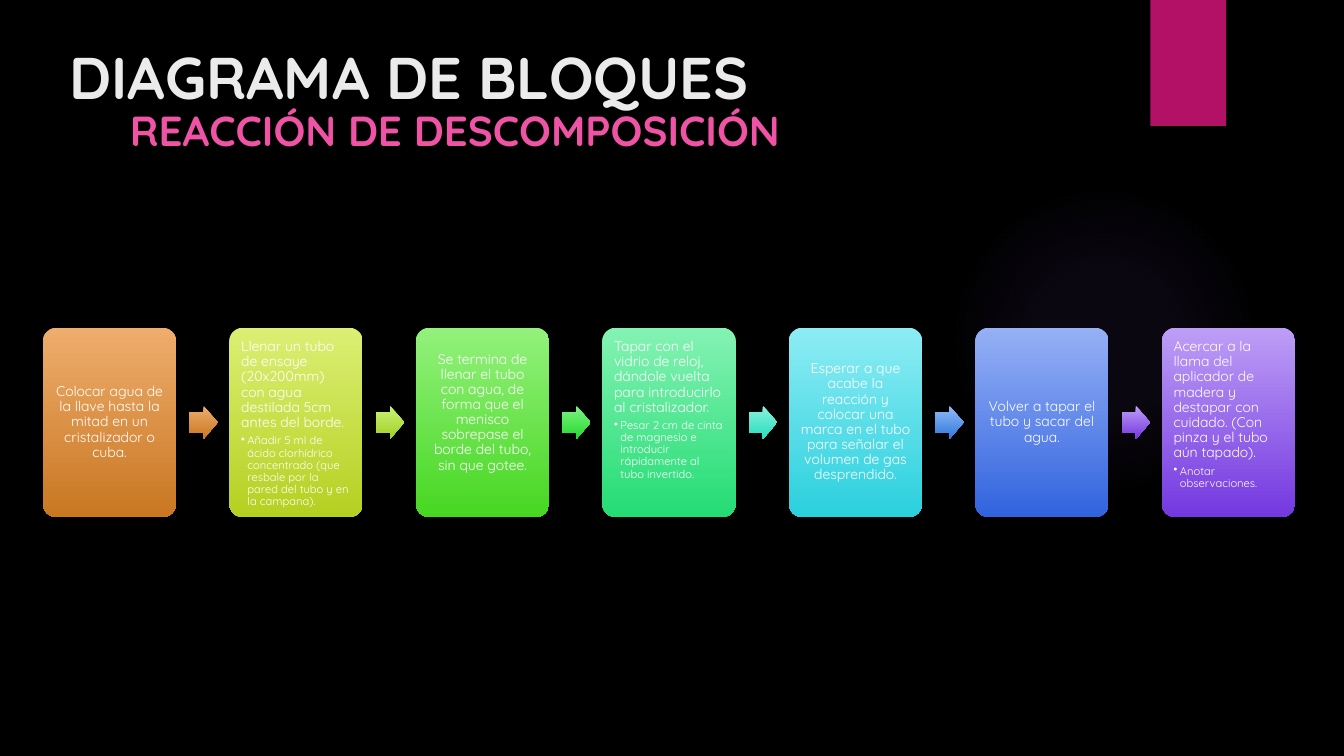
from lxml import etree
from pptx import Presentation
from pptx.dml.color import RGBColor
from pptx.enum.shapes import MSO_SHAPE
from pptx.enum.text import MSO_ANCHOR, MSO_AUTO_SIZE, PP_ALIGN
from pptx.oxml import parse_xml
from pptx.oxml.ns import qn
from pptx.util import Pt

ROUNDED, ARROW = MSO_SHAPE.ROUNDED_RECTANGLE, MSO_SHAPE.RIGHT_ARROW
ELLIPSE, RECTANGLE = MSO_SHAPE.OVAL, MSO_SHAPE.RECTANGLE
TOP, MIDDLE, BOTTOM = MSO_ANCHOR.TOP, MSO_ANCHOR.MIDDLE, MSO_ANCHOR.BOTTOM
LEFT, CENTER = PP_ALIGN.LEFT, PP_ALIGN.CENTER
NO_AUTOFIT = MSO_AUTO_SIZE.NONE

FONT = "Quicksand"
FIRST_LEFT, STEP_TOP, PITCH = 30.7, 234.1, 133.2
STEP_WIDTH, STEP_HEIGHT = 95.2, 135.2
ARROW_OFFSET, ARROW_WIDTH, ARROW_HEIGHT = 104.6, 20.2, 23.6
INSET = 5.6
BULLET_INDENT = Pt(4.5)

STEPS = [
    ("Colocar agua de la llave hasta la mitad en un cristalizador o cuba.",
     "", "EEAD6D", "C97721"),
    ("Llenar un tubo de ensaye (20x200mm) con agua destilada 5cm antes del borde.",
     "Añadir 5 ml de ácido clorhídrico concentrado (que resbale por la pared "
     "del tubo y en la campana).", "DCEF74", "B5D021"),
    ("Se termina de llenar el tubo con agua, de forma que el menisco sobrepase "
     "el borde del tubo, sin que gotee.", "", "93F17C", "47D722"),
    ("Tapar con el vidrio de reloj, dándole vuelta para introducirlo al cristalizador.",
     "Pesar 2 cm de cinta de magnesio e introducir rápidamente al tubo invertido.",
     "84F2B3", "24DC74"),
    ("Esperar a que acabe la reacción y colocar una marca en el tubo para señalar "
     "el volumen de gas desprendido.", "", "8DECF4", "2BD0DE"),
    ("Volver a tapar el tubo y sacar del agua.", "", "95B0F5", "3163DF"),
    ("Acercar a la llama del aplicador de madera y destapar con cuidado. "
     "(Con pinza y el tubo aún tapado).", "Anotar observaciones.", "BD9EF6", "7438E0"),
]
ARROW_COLOURS = [
    ("EEAD6D", "C97721"), ("CCF076", "A0D122"), ("7FF285", "23DA2C"),
    ("89F3E0", "28DDBC"), ("94BBF5", "3078DF"), ("BD9EF6", "7438E0"),
]
EXTRA_BOTTOM = {2: 14}

GLOW_FILL = (
    '<a:gradFill xmlns:a="http://schemas.openxmlformats.org/drawingml/2006/main"><a:gsLst>'
    + "".join(
        f'<a:gs pos="{position}000"><a:srgbClr val="9B6BF2">'
        f'<a:alpha val="{alpha}000"/></a:srgbClr></a:gs>'
        for position, alpha in ((0, 7), (36, 6), (69, 0))
    )
    + '</a:gsLst><a:path path="circle">'
    '<a:fillToRect l="50000" t="50000" r="50000" b="50000"/></a:path></a:gradFill>'
)


def colour(value):
    return RGBColor.from_string(value)


def add_plain_shape(page, kind, left, top, width, height):
    shape = page.shapes.add_shape(kind, Pt(left), Pt(top), Pt(width), Pt(height))
    shape.shadow.inherit = False
    shape.line.fill.background()
    return shape


def fill_solid(shape, value):
    shape.fill.solid()
    shape.fill.fore_color.rgb = colour(value)


def fill_gradient(shape, start, end):
    shape.fill.gradient()
    shape.fill.gradient_angle = 270
    for stop, value in zip(shape.fill.gradient_stops, (start, end)):
        stop.color.rgb = colour(value)


def set_font(para, size, value, bold=False):
    para.font.name = FONT
    para.font.size = Pt(size)
    para.font.bold = bold
    para.font.color.rgb = colour(value)


def set_heading(box, text, size, value, anchor):
    frame = box.text_frame
    frame.word_wrap = True
    frame.auto_size = NO_AUTOFIT
    frame.vertical_anchor = anchor
    para = frame.paragraphs[0]
    para.text = text
    para.alignment = LEFT
    set_font(para, size, value, bold=True)


def add_bullet(para):
    properties = para._p.get_or_add_pPr()
    properties.set("marL", str(BULLET_INDENT))
    properties.set("indent", str(-BULLET_INDENT))
    etree.SubElement(properties, qn("a:buChar")).set("char", "•")


def write_step_para(para, text, size, alignment, space_after):
    para.text = text
    para.alignment = alignment
    para.line_spacing = 0.9
    para.space_after = Pt(space_after)
    set_font(para, size, "FFFFFF")


def add_step(page, left, text, detail, start, end, extra_bottom):
    box = add_plain_shape(page, ROUNDED, left, STEP_TOP, STEP_WIDTH, STEP_HEIGHT)
    box.adjustments[0] = 0.1
    fill_gradient(box, start, end)
    frame = box.text_frame
    frame.word_wrap = True
    frame.margin_left = frame.margin_right = frame.margin_top = Pt(INSET)
    frame.margin_bottom = Pt(INSET + extra_bottom)
    frame.vertical_anchor = TOP if detail else MIDDLE
    write_step_para(frame.paragraphs[0], text, 10, LEFT if detail else CENTER, 3.5)
    if detail:
        para = frame.add_paragraph()
        add_bullet(para)
        write_step_para(para, detail, 8, LEFT, 1.2)


def add_step_arrow(page, left, start, end):
    top = STEP_TOP + (STEP_HEIGHT - ARROW_HEIGHT) / 2
    arrow = add_plain_shape(page, ARROW, left, top, ARROW_WIDTH, ARROW_HEIGHT)
    arrow.adjustments[0] = 0.6
    arrow.adjustments[1] = 0.5
    fill_gradient(arrow, start, end)


def add_glow(page):
    glow = add_plain_shape(page, ELLIPSE, 677.5, 131.8, 221.8, 221.8)
    glow._element.spPr.find(qn("a:prstGeom")).addnext(parse_xml(GLOW_FILL))


def main():
    deck = Presentation()
    deck.slide_width, deck.slide_height = Pt(960), Pt(540)
    page = deck.slides.add_slide(deck.slide_layouts[5])
    page.background.fill.solid()
    page.background.fill.fore_color.rgb = colour("000000")

    add_glow(page)
    band = add_plain_shape(page, RECTANGLE, 821.8, 0, 54, 90)
    fill_solid(band, "B31166")

    subtitle = page.shapes.add_textbox(Pt(85.7), Pt(69.1), Pt(742.3), Pt(45.4))
    set_heading(subtitle, "REACCIÓN DE DESCOMPOSICIÓN", 30, "EF53A5", BOTTOM)
    title = page.shapes.title
    title.left, title.top, title.width, title.height = Pt(42.5), Pt(25.2), Pt(740.9), Pt(110.2)
    set_heading(title, "DIAGRAMA DE BLOQUES", 42, "EBEBEB", TOP)

    for index, step in enumerate(STEPS):
        add_step(page, FIRST_LEFT + index * PITCH, *step, EXTRA_BOTTOM.get(index, 0))
    for index, colours in enumerate(ARROW_COLOURS):
        add_step_arrow(page, FIRST_LEFT + ARROW_OFFSET + index * PITCH, *colours)

    deck.save("out.pptx")


if __name__ == "__main__":
    main()
